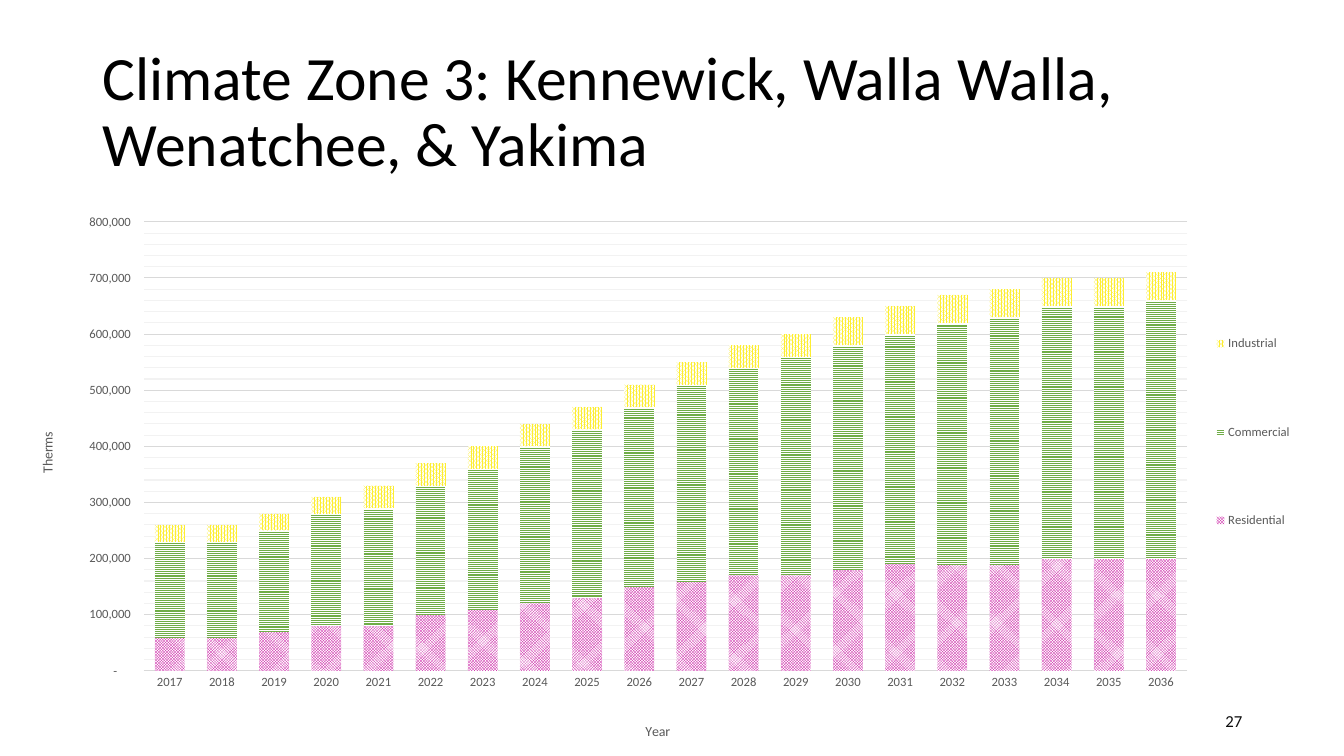
from copy import deepcopy

from lxml import etree
from pptx import Presentation
from pptx.chart.data import CategoryChartData
from pptx.dml.color import RGBColor
from pptx.enum.chart import XL_CHART_TYPE, XL_LEGEND_POSITION, XL_TICK_MARK
from pptx.enum.dml import MSO_PATTERN
from pptx.enum.text import MSO_ANCHOR, PP_ALIGN
from pptx.oxml.ns import qn
from pptx.util import Inches, Pt

TITLE = "Climate Zone 3: Kennewick, Walla Walla, Wenatchee, & Yakima"
PAGE_NUMBER = "27"
YEARS = [str(year) for year in range(2017, 2037)]
# name, therms in thousands, pattern, colour name
SECTORS = [
    ("Residential",
     [60, 60, 70, 80, 80, 100, 110, 120, 130, 150,
      160, 170, 170, 180, 190, 190, 190, 200, 200, 200],
     MSO_PATTERN.SMALL_CHECKER_BOARD, "residential"),
    ("Commercial",
     [170, 170, 180, 200, 210, 230, 250, 280, 300, 320,
      350, 370, 390, 400, 410, 430, 440, 450, 450, 460],
     MSO_PATTERN.NARROW_HORIZONTAL, "commercial"),
    ("Industrial", [30] * 4 + [40] * 9 + [50] * 7,
     MSO_PATTERN.PERCENT_80, "industrial"),
]
NUMBER_FORMAT = '_(* #,##0_);_(* \\(#,##0\\);_(* "-"??_);_('
FONT = "Calibri"
COLORS = {
    "title": "000000", "number": "0D0D0D", "label": "595959",
    "grid": "D9D9D9", "minor grid": "F2F2F2", "paper": "FFFFFF",
    "residential": "C30199", "commercial": "70AD47", "industrial": "FDEE31",
}
# Shares of the chart's size: x, y, and where needed width, height
PLOT_AREA = (0.097, 0.034, 0.813, 0.835)
LEGEND_AREA = (0.924, 0.11, 0.075, 0.63)
YEAR_PLACE = (0.486, 0.96)
THERMS_PLACE = (0.013, 0.42)


def color(name):
    return RGBColor.from_string(COLORS[name])


def style_font(font, size, color_name):
    font.name = FONT
    font.size = Pt(size)
    font.bold = False
    font.color.rgb = color(color_name)


def add_text(slide, box, text, size, color_name, alignment, spacing=1.0):
    frame = slide.shapes.add_textbox(*map(Inches, box)).text_frame
    frame.word_wrap = True
    frame.vertical_anchor = MSO_ANCHOR.MIDDLE
    paragraph = frame.paragraphs[0]
    paragraph.alignment = alignment
    paragraph.line_spacing = spacing
    run = paragraph.add_run()
    run.text = text
    style_font(run.font, size, color_name)


def place(element, area, inner=False):
    """Give a chart part a fixed place, in shares of the chart's size."""
    layout = element.find(qn("c:layout"))
    if layout is None:
        layout = etree.Element(qn("c:layout"))
        before = element.find(qn("c:legendPos"))
        if before is None:
            before = element.find(qn("c:tx"))
        if before is None:
            element.insert(0, layout)
        else:
            before.addnext(layout)
    for child in list(layout):
        layout.remove(child)
    manual = etree.SubElement(layout, qn("c:manualLayout"))
    settings = [("layoutTarget", "inner")] if inner else []
    settings += [("xMode", "edge"), ("yMode", "edge")]
    settings += zip("xywh", map(str, area))
    for tag, value in settings:
        etree.SubElement(manual, qn("c:" + tag)).set("val", value)


def style_line(line, color_name):
    line.color.rgb = color(color_name)
    line.width = Pt(0.75)


def style_axis(axis, title, title_place, degrees):
    style_font(axis.tick_labels.font, 9, "label")
    frame = axis.axis_title.text_frame
    frame._txBody.find(qn("a:bodyPr")).set("rot", str(degrees * 60000))
    run = frame.paragraphs[0].add_run()
    run.text = title
    style_font(run.font, 10, "label")
    place(axis.axis_title._element, title_place)


def style_gridlines(axis):
    axis.has_major_gridlines = axis.has_minor_gridlines = True
    style_line(axis.major_gridlines.format.line, "grid")
    major = axis._element.find(qn("c:majorGridlines"))
    minor = axis._element.find(qn("c:minorGridlines"))
    minor.append(deepcopy(major.find(qn("c:spPr"))))
    for shade in minor.iter(qn("a:srgbClr")):
        shade.set("val", COLORS["minor grid"])


def add_therms_chart(slide):
    data = CategoryChartData(number_format=NUMBER_FORMAT)
    data.categories = YEARS
    for name, thousands, _, _ in SECTORS:
        data.add_series(name, [value * 1000 for value in thousands])
    chart = slide.shapes.add_chart(
        XL_CHART_TYPE.COLUMN_STACKED,
        *map(Inches, (0.19, 2.02, 12.73, 5.36)), data).chart
    chart.has_title = False
    style_font(chart.font, 10, "title")

    plot = chart.plots[0]
    plot.gap_width = 75
    plot.overlap = 100
    plot.vary_by_categories = False
    for series, (_, _, pattern, color_name) in zip(plot.series, SECTORS):
        fill = series.format.fill
        fill.patterned()
        fill.pattern = pattern
        fill.fore_color.rgb = color(color_name)
        fill.back_color.rgb = color("paper")

    years = chart.category_axis
    style_axis(years, "Year", YEAR_PLACE, 0)
    years.major_tick_mark = XL_TICK_MARK.NONE
    style_line(years.format.line, "grid")

    therms = chart.value_axis
    style_axis(therms, "Therms", THERMS_PLACE, -90)
    therms.minimum_scale, therms.maximum_scale = 0, 800000
    therms.major_unit, therms.minor_unit = 100000, 20000
    therms.major_tick_mark = XL_TICK_MARK.OUTSIDE
    style_gridlines(therms)
    therms.format.line.fill.background()
    therms.tick_labels.number_format = NUMBER_FORMAT
    therms.tick_labels.number_format_is_linked = False

    chart.has_legend = True
    legend = chart.legend
    legend.position = XL_LEGEND_POSITION.RIGHT
    legend.include_in_layout = False
    style_font(legend.font, 9, "label")
    place(legend._element, LEGEND_AREA)
    place(chart._chartSpace.chart.plotArea, PLOT_AREA, inner=True)


def main():
    presentation = Presentation()
    presentation.slide_width = Inches(13.33)
    presentation.slide_height = Inches(7.5)
    slide = presentation.slides.add_slide(presentation.slide_layouts[6])
    add_text(slide, (0.92, 0.4, 11.5, 1.45), TITLE, 44, "title",
             PP_ALIGN.LEFT, 0.9)
    add_therms_chart(slide)
    add_text(slide, (9.42, 6.95, 3, 0.4), PAGE_NUMBER, 12, "number",
             PP_ALIGN.RIGHT)
    presentation.save("out.pptx")


if __name__ == "__main__":
    main()
